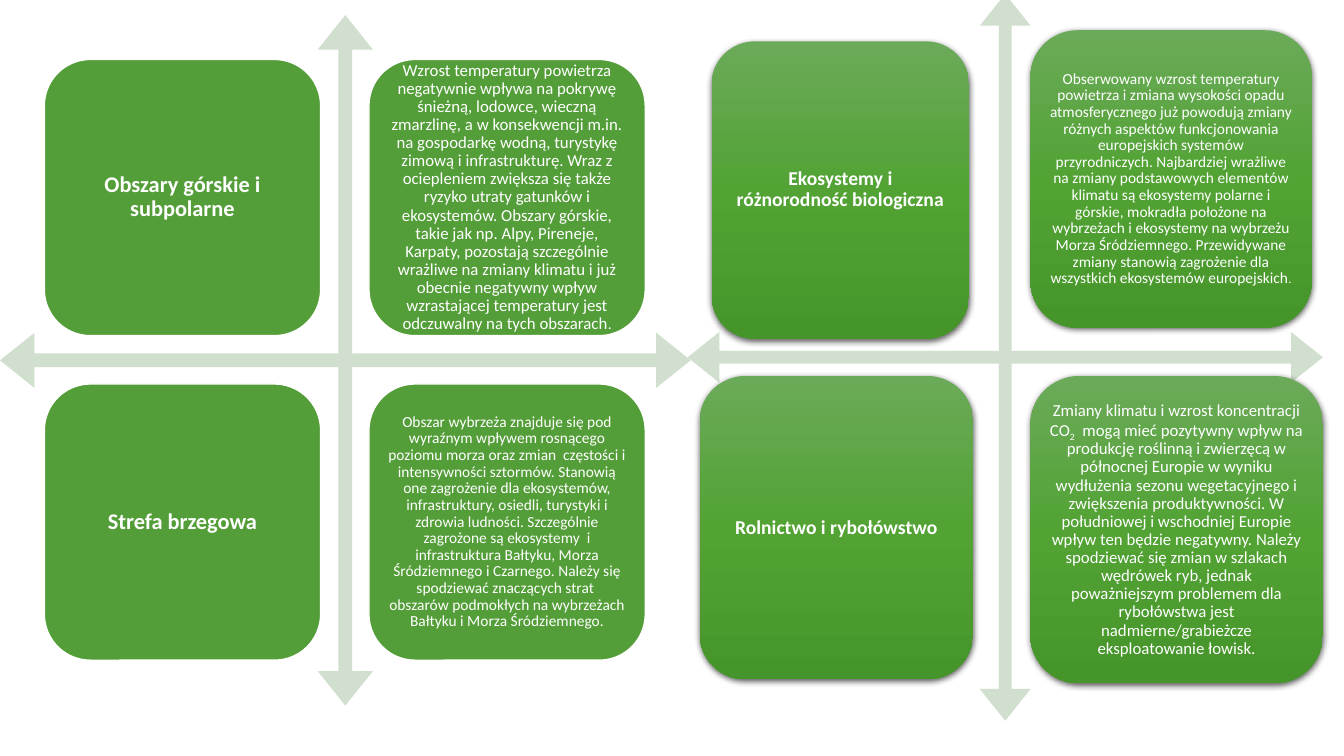
from copy import deepcopy
from dataclasses import dataclass

from pptx import Presentation
from pptx import util as u
from pptx.dml.color import RGBColor
from pptx.enum import shapes, text
from pptx.oxml import parse_xml
from pptx.oxml.ns import nsdecls


@dataclass(frozen=True)
class Theme:
    font: str = "Calibri"
    white: str = "FFFFFF"
    green: str = "549E39"
    arrow: str = "D1DFCE"
    gradient: tuple = ((0, "6BAA59"), (0.5, "52A334"), (1, "46952A"))
    heading_large: int = 16
    heading: int = 14
    body: int = 12
    body_small: int = 11
    stop_small: int = 9


T = Theme()

MOUNTAINS = (
    "Wzrost temperatury powietrza negatywnie wpływa na pokrywę śnieżną, lodowce, "
    "wieczną zmarzlinę, a w konsekwencji m.in. na gospodarkę wodną, turystykę zimową "
    "i infrastrukturę. Wraz z ociepleniem zwiększa się także ryzyko utraty gatunków "
    "i ekosystemów. Obszary górskie, takie jak np. Alpy, Pireneje, Karpaty, pozostają "
    "szczególnie wrażliwe na zmiany klimatu i już obecnie negatywny wpływ wzrastającej "
    "temperatury jest odczuwalny na tych obszarach"
)
COAST = (
    "Obszar wybrzeża znajduje się pod wyraźnym wpływem rosnącego poziomu morza oraz "
    "zmian  częstości i intensywności sztormów. Stanowią one zagrożenie dla ekosystemów, "
    "infrastruktury, osiedli, turystyki i zdrowia ludności. Szczególnie zagrożone są "
    "ekosystemy  i infrastruktura Bałtyku, Morza Śródziemnego i Czarnego. Należy się "
    "spodziewać znaczących strat  obszarów podmokłych na wybrzeżach Bałtyku i Morza "
    "Śródziemnego."
)
ECOSYSTEMS = (
    "Obserwowany wzrost temperatury powietrza i zmiana wysokości opadu atmosferycznego "
    "już powodują zmiany różnych aspektów funkcjonowania europejskich systemów "
    "przyrodniczych. Najbardziej wrażliwe na zmiany podstawowych elementów klimatu są "
    "ekosystemy polarne i górskie, mokradła położone na wybrzeżach i ekosystemy na "
    "wybrzeżu Morza Śródziemnego. Przewidywane zmiany stanowią zagrożenie dla wszystkich "
    "ekosystemów europejskich"
)
FARMING = (
    "  mogą mieć pozytywny wpływ na produkcję roślinną i zwierzęcą w północnej Europie "
    "w wyniku wydłużenia sezonu wegetacyjnego i zwiększenia produktywności. W południowej "
    "i wschodniej Europie wpływ ten będzie negatywny. Należy spodziewać się zmian "
    "w szlakach wędrówek ryb, jednak poważniejszym problemem dla rybołówstwa jest "
    "nadmierne/grabieżcze eksploatowanie łowisk."
)


def add_run(p, content, size=T.body, bold=False, color=T.white, baseline=0):
    r = p.add_run()
    r.text = content
    r.font.name = T.font
    r.font.size = u.Pt(size)
    r.font.bold = bold
    r.font.color.rgb = RGBColor.from_string(color)
    if baseline:
        r.font._element.set("baseline", str(baseline * 1000))


def add_preset(s, kind, box, color):
    sp = s.shapes.add_shape(kind, *(u.Inches(v) for v in box))
    sp.shadow.inherit = False
    sp.fill.solid()
    sp.fill.fore_color.rgb = RGBColor.from_string(color)
    sp.line.fill.background()
    return sp


def apply_gloss(sp):
    sp.fill.gradient()
    sp.fill.gradient_angle = 270
    stops = sp._element.spPr.find(".//{*}gsLst")
    stops.append(deepcopy(stops[0]))
    for stop, (position, color) in zip(sp.fill.gradient_stops, T.gradient):
        stop.position = position
        stop.color.rgb = RGBColor.from_string(color)
    for stop in stops:
        for adjustment in list(stop[0]):
            stop[0].remove(adjustment)
    sp._element.spPr.find("{*}effectLst").append(parse_xml(
        f'<a:outerShdw {nsdecls("a")} blurRad="57150" dist="19050" dir="5400000" '
        'algn="ctr" rotWithShape="0"><a:srgbClr val="000000">'
        '<a:alpha val="63000"/></a:srgbClr></a:outerShdw>'))


def add_card(s, box, runs, inset, glossy):
    sp = add_preset(s, shapes.MSO_SHAPE.ROUNDED_RECTANGLE, box, T.green)
    if glossy:
        apply_gloss(sp)
    else:
        sp.line.color.rgb = RGBColor.from_string(T.white)
        sp.line.width = u.Pt(1)
    tf = sp.text_frame
    tf.word_wrap = True
    tf.vertical_anchor = text.MSO_ANCHOR.MIDDLE
    tf.margin_left = tf.margin_right = tf.margin_top = tf.margin_bottom = u.Inches(inset)
    p = tf.paragraphs[0]
    p.alignment = text.PP_ALIGN.CENTER
    p.line_spacing = 0.9
    for content, style in runs:
        add_run(p, content, **style)


def add_matrix(s, box, places, heading_size, rows, glossy=False):
    left, top, _, _ = box
    cross = add_preset(s, shapes.MSO_SHAPE.QUAD_ARROW, box, T.arrow)
    for i, value in enumerate((0.02, 0.04, 0.05)):
        cross.adjustments[i] = value
    cards = []
    for heading, body in rows:
        cards.append(([(heading, dict(size=heading_size, bold=True))], 0.07))
        cards.append((body, 0.05))
    for (dx, dy, width, height), (runs, inset) in zip(places, cards):
        add_card(s, (left + dx, top + dy, width, height), runs, inset, glossy)


def main():
    prs = Presentation()
    prs.slide_width, prs.slide_height = u.Inches(13.33), u.Inches(7.5)
    s = prs.slides.add_slide(prs.slide_layouts[6])

    side, gap = 2.74, 0.48
    even_grid = [(0.44 + col * (side + gap), 0.44 + row * (side + gap), side, side)
                 for row in range(2) for col in range(2)]
    add_matrix(s, (0, 0.15, 6.85, 6.85), even_grid, T.heading_large, [
        ("Obszary górskie i subpolarne",
         [(MOUNTAINS, dict(size=T.body)), (".", dict(size=T.body_small))]),
        ("Strefa brzegowa", [(COAST, dict(size=T.body_small))]),
    ])

    uneven_grid = [(0.24, 0.47, 2.55, 2.95), (3.4, 0.36, 2.79, 2.95),
                   (0.12, 3.79, 2.71, 3.01), (3.4, 3.79, 2.9, 3.05)]
    add_matrix(s, (6.82, -0.06, 6.3, 7.21), uneven_grid, T.heading, [
        ("Ekosystemy i różnorodność biologiczna",
         [(ECOSYSTEMS, dict(size=T.body_small)), (".", dict(size=T.stop_small))]),
        ("Rolnictwo i rybołówstwo",
         [("Zmiany klimatu i wzrost koncentracji CO", {}),
          ("2", dict(baseline=-25)), (FARMING, {})]),
    ], glossy=True)

    prs.save("out.pptx")


if __name__ == "__main__":
    main()
